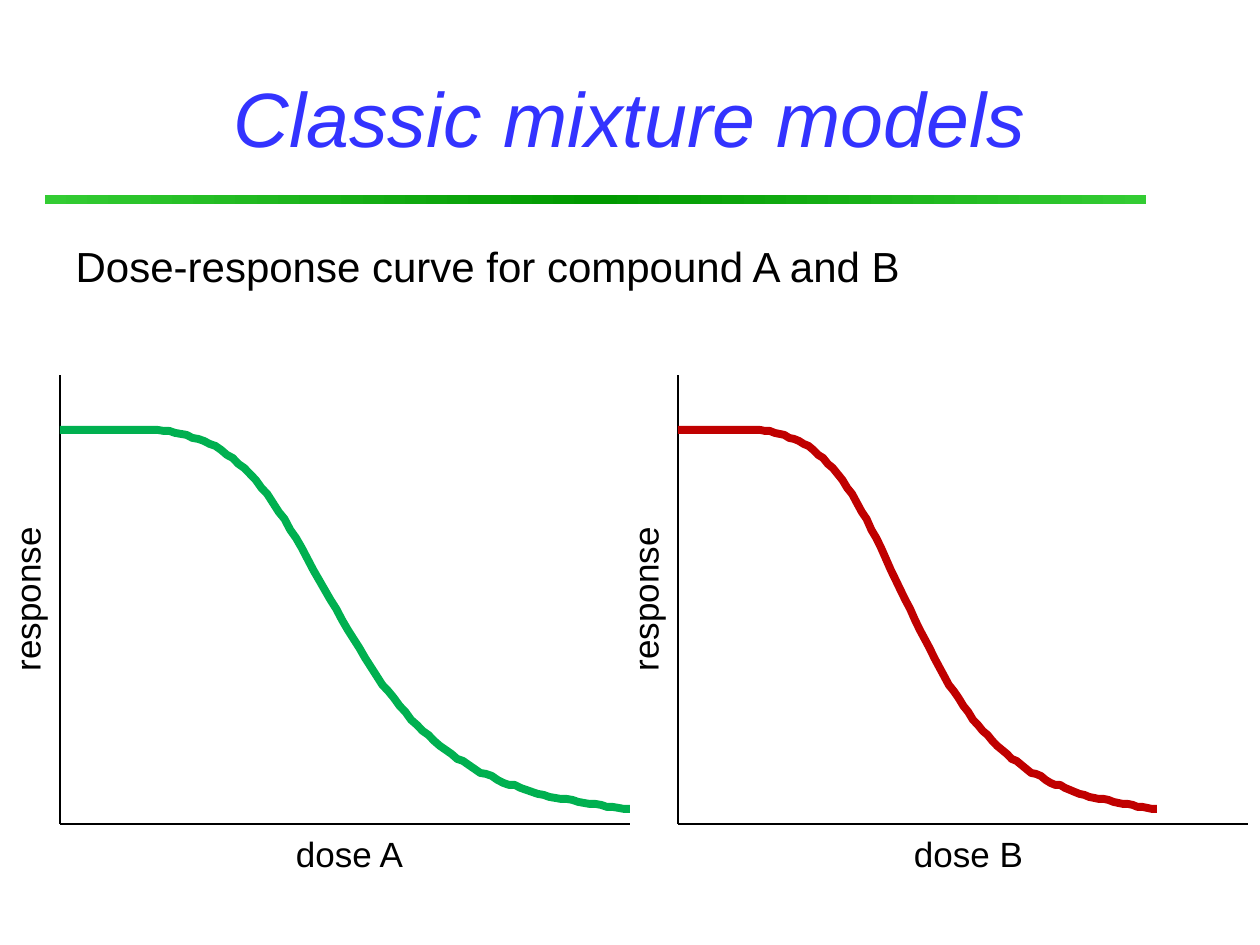
from copy import deepcopy

from pptx import Presentation
from pptx.dml.color import RGBColor
from pptx.enum import shapes, text
from pptx.oxml.ns import qn
from pptx.util import Pt
from lxml import etree

PX = 914400 // 126
FONT = "Arial"
COLORS = {"title": "3333FF", "text": "000000", "axis": "000000",
          "bar_edge": "33CC33", "bar_mid": "009900",
          "curve_a": "00B050", "curve_b": "C00000"}

# Fall of the response at equal dose steps, in px below the plateau
DROPS = [0] * 18 + [
    1, 1, 3, 4, 5, 8, 9, 11, 14, 16, 20, 25, 28, 34, 38, 44, 50, 58, 64, 73,
    82, 89, 100, 108, 118, 129, 140, 150, 160, 170, 179, 190, 200, 209, 218,
    228, 237, 246, 255, 261, 268, 276, 282, 290, 295, 301, 305, 311, 316, 320,
    324, 329, 331, 335, 339, 343, 344, 346, 350, 353, 355, 355, 358, 360, 362,
    364, 365, 367, 368, 369, 369, 370, 372, 373, 374, 374, 375, 377, 377, 378,
    379, 379]


def px(*values):
    return [round(v * PX) for v in values]


def rgb(name):
    return RGBColor.from_string(COLORS[name])


def add_run(p, words, size, color, italic=False):
    r = p.add_run()
    r.text = words
    r.font.name, r.font.size, r.font.italic = FONT, Pt(size), italic
    r.font.color.rgb = rgb(color)


def place(sp, box):
    sp.left, sp.top, sp.width, sp.height = px(*box)


def add_title(slide, box):
    sp = slide.shapes.title
    place(sp, box)
    tf = sp.text_frame
    tf.auto_size = text.MSO_AUTO_SIZE.NONE
    tf.vertical_anchor = text.MSO_ANCHOR.MIDDLE
    p = tf.paragraphs[0]
    p.alignment = text.PP_ALIGN.CENTER
    add_run(p, "Classic mixture models", 44, "title", italic=True)


def add_bar(slide, box):
    sp = slide.shapes.add_shape(shapes.MSO_SHAPE.RECTANGLE, *px(*box))
    sp.shadow.inherit = False
    sp.line.fill.background()
    sp.fill.gradient()
    sp.fill.gradient_angle = 0
    # A third stop, so that the middle is darker than both ends
    stop_list = sp._element.spPr.find(qn("a:gradFill")).find(qn("a:gsLst"))
    stop_list.append(deepcopy(stop_list[-1]))
    stops = zip(sp.fill.gradient_stops, (0, 0.5, 1),
                ("bar_edge", "bar_mid", "bar_edge"))
    for stop, position, color in stops:
        stop.position = position
        stop.color.rgb = rgb(color)


def add_body(slide, box):
    sp = slide.placeholders[1]
    place(sp, box)
    tf = sp.text_frame
    tf.auto_size = text.MSO_AUTO_SIZE.NONE
    p = tf.paragraphs[0]
    add_run(p, "Dose-response curve for compound A and B", 24, "text")
    # Hanging indent without a bullet
    pPr = p._p.get_or_add_pPr()
    pPr.set("marL", str(48 * PX))
    pPr.set("indent", str(-48 * PX))
    etree.SubElement(pPr, qn("a:buNone"))


def add_axis(group, x1, y1, x2, y2):
    line = group.shapes.add_connector(shapes.MSO_CONNECTOR.STRAIGHT,
                                      *px(x1, y1, x2, y2))
    line.line.color.rgb = rgb("axis")
    line.line.width = Pt(1.5)
    etree.SubElement(line._element.spPr, qn("a:effectLst"))


def add_label(group, words, box, rotation=0):
    sp = group.shapes.add_textbox(*px(*box))
    sp.rotation = rotation
    tf = sp.text_frame
    tf.margin_left = tf.margin_right = tf.margin_top = tf.margin_bottom = 0
    tf.word_wrap = False
    tf.auto_size = text.MSO_AUTO_SIZE.SHAPE_TO_FIT_TEXT
    add_run(tf.paragraphs[0], words, 20, "text")


def add_plot(slide, box, dose, color, curve_width):
    x, y, w, h = box
    group = slide.shapes.add_group_shape()
    # Axes
    add_axis(group, x, y + h, x + w, y + h)
    add_axis(group, x, y + h, x, y)
    # Curve
    step = curve_width / (len(DROPS) - 1)
    points = [px(x + i * step, y + 55 + d) for i, d in enumerate(DROPS)]
    builder = group.shapes.build_freeform(*points[0])
    builder.add_line_segments(points[1:], close=False)
    curve = builder.convert_to_shape()
    curve.shadow.inherit = False
    curve.fill.background()
    curve.line.color.rgb = rgb(color)
    curve.line.width = Pt(4.5)
    # Axis labels
    add_label(group, dose, (x + 236, y + h + 8, 114, 43))
    add_label(group, "response", (x - 107, y + 201, 148, 43), rotation=270)


def main():
    prs = Presentation()
    prs.slide_width, prs.slide_height = px(1260, 945)
    slide = prs.slides.add_slide(prs.slide_layouts[1])
    add_bar(slide, (45, 195, 1101, 9))
    add_title(slide, (63, 38, 1134, 157))
    add_body(slide, (63, 234, 1134, 90))
    plots = [("dose A", "curve_a", 570), ("dose B", "curve_b", 479)]
    for i, (dose, color, curve_width) in enumerate(plots):
        add_plot(slide, (60 + i * 618, 375, 570, 449), dose, color, curve_width)
    prs.save("out.pptx")


if __name__ == "__main__":
    main()
